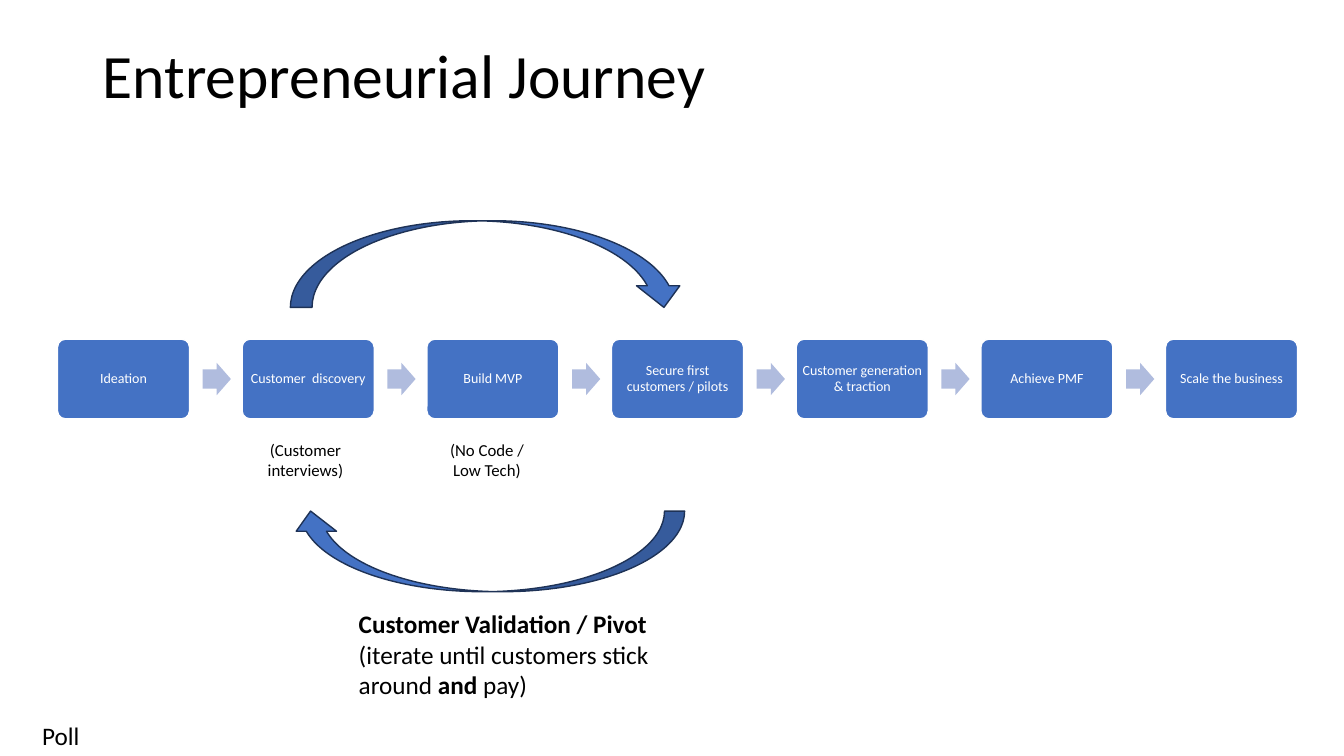
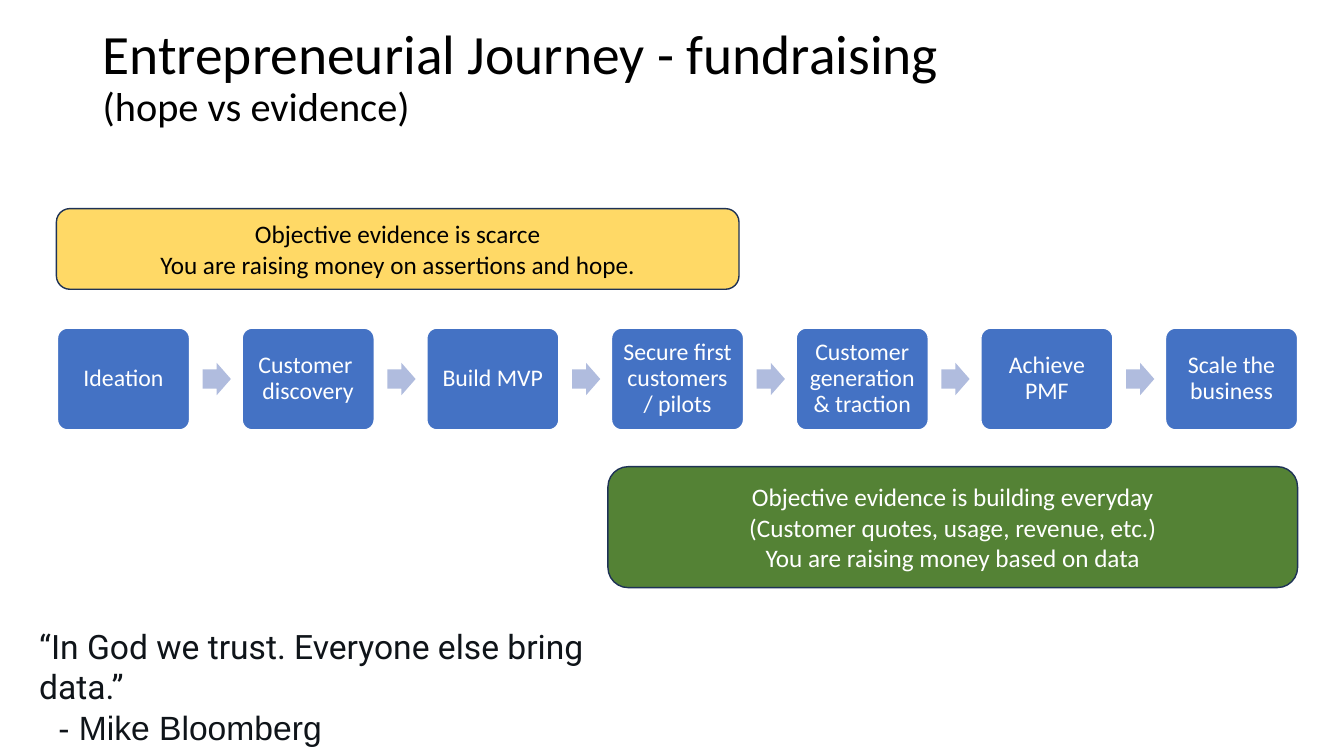
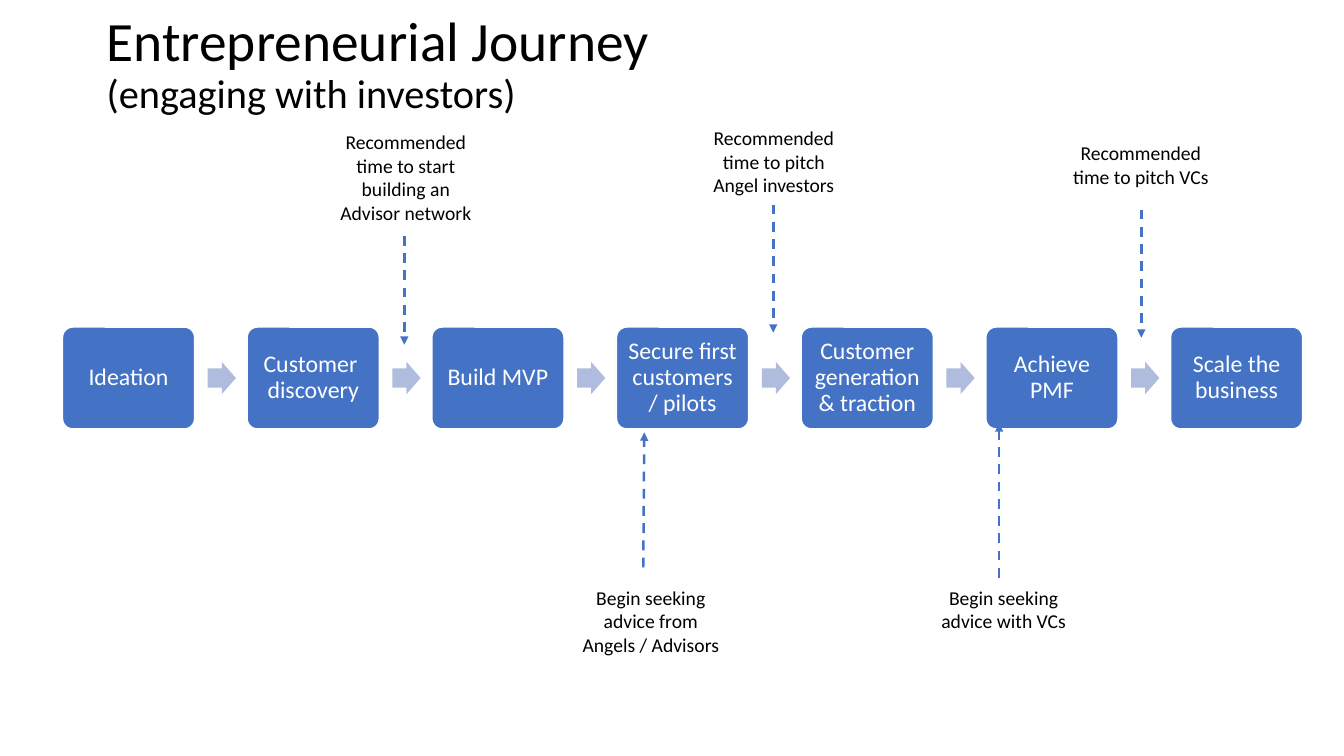
from dataclasses import dataclass
from typing import Optional

from lxml import etree
from pptx import Presentation
from pptx import util as u
from pptx.dml.color import RGBColor
from pptx.enum import dml, shapes, text
from pptx.oxml.ns import qn


@dataclass(frozen=True)
class Theme:
    """Colours, fonts and type sizes shared by all slides."""
    black: str = "000000"
    white: str = "FFFFFF"
    blue: str = "4472C4"
    pale_blue: str = "B0BCDE"
    navy: str = "1E3256"
    yellow: str = "FFD966"
    green: str = "548235"
    ink: str = "0F1419"
    font: str = "Calibri"
    quote_font: str = "Roboto"
    author_font: str = "Arial"
    title: float = 44
    long_title: float = 39.6
    subtitle: float = 28.8
    quote: float = 24
    body: float = 18
    stage: float = 17
    callout: float = 14
    note: float = 12
    small_stage: float = 10


THEME = Theme()


@dataclass(frozen=True)
class Area:
    left: float
    top: float
    width: float
    height: float

    def lengths(self) -> list:
        return [u.Inches(n) for n in (self.left, self.top, self.width, self.height)]


@dataclass(frozen=True)
class Span:
    """A piece of text; a newline in it is a line break."""
    text: str
    bold: Optional[bool] = None
    size: Optional[float] = None


@dataclass(frozen=True)
class Para:
    spans: tuple
    size: float = THEME.body
    color: str = THEME.black
    font: str = THEME.font
    centred: bool = False
    spacing: Optional[float] = None
    indent: float = 0


@dataclass(frozen=True)
class Flow:
    """Placement and type of the row of stages."""
    left: float
    middle: float
    box_height: float
    size: float
    inset: float
    discovery: str


@dataclass(frozen=True)
class Callout:
    """A centred note with a dashed arrow."""
    area: Area
    words: str
    start: tuple
    end: tuple


STAGE_COUNT = 7
STAGE_STEP = 10.99 / (STAGE_COUNT - 1)
STAGE_WIDTH = 1.31
ARROW_OFFSET, ARROW_WIDTH, ARROW_HEIGHT = 1.44, 0.28, 0.32


# Text

def plain(words: str, **style) -> Para:
    return Para((Span(words),), **style)


def write(frame, paras: list, anchor=text.MSO_ANCHOR.TOP) -> None:
    frame.word_wrap = True
    frame.vertical_anchor = anchor
    for index, para in enumerate(paras):
        paragraph = frame.add_paragraph() if index else frame.paragraphs[0]
        paragraph.alignment = text.PP_ALIGN.CENTER if para.centred else text.PP_ALIGN.LEFT
        if para.spacing:
            paragraph.line_spacing = para.spacing
        if para.indent:
            paragraph._p.get_or_add_pPr().set("marL", str(u.Inches(para.indent)))
        paragraph.font.name = para.font
        paragraph.font.size = u.Pt(para.size)
        paragraph.font.color.rgb = RGBColor.from_string(para.color)
        for span in para.spans:
            for number, line in enumerate(span.text.split("\n")):
                if number:
                    paragraph.add_line_break()
                if not line:
                    continue
                run = paragraph.add_run()
                run.text = line
                if span.bold is not None:
                    run.font.bold = span.bold
                if span.size:
                    run.font.size = u.Pt(span.size)


def add_text(page, area: Area, paras: list, anchor=text.MSO_ANCHOR.TOP) -> None:
    write(page.shapes.add_textbox(*area.lengths()).text_frame, paras, anchor)


def add_title(page, heading: str, subtitle: str = "", left: float = 0.92,
              top: float = 0.31) -> None:
    if subtitle:
        spans = (Span(heading + "\n", size=THEME.long_title),
                 Span(subtitle, size=THEME.subtitle))
    else:
        spans = (Span(heading),)
    add_text(page, Area(left, top, 11.5, 0.94),
             [Para(spans, size=THEME.title, spacing=0.9)], text.MSO_ANCHOR.MIDDLE)


# Shapes

def add_box(page, kind, area: Area, fill: str, outline: Optional[str] = None):
    box = page.shapes.add_shape(kind, *area.lengths())
    box.shadow.inherit = False
    box.fill.solid()
    box.fill.fore_color.rgb = RGBColor.from_string(fill)
    if outline:
        box.line.color.rgb = RGBColor.from_string(outline)
        box.line.width = u.Pt(1)
    else:
        box.line.fill.background()
    return box


def add_flow(page, flow: Flow) -> None:
    stages = ["Ideation", flow.discovery, "Build MVP", "Secure first customers / pilots",
              "Customer generation & traction", "Achieve PMF", "Scale the business"]
    for index, stage in enumerate(stages):
        left = flow.left + index * STAGE_STEP
        area = Area(left, flow.middle - flow.box_height / 2, STAGE_WIDTH, flow.box_height)
        box = add_box(page, shapes.MSO_SHAPE.ROUNDED_RECTANGLE, area, THEME.blue, THEME.white)
        box.adjustments[0] = 0.1
        frame = box.text_frame
        frame.margin_left = frame.margin_right = u.Inches(flow.inset)
        frame.margin_top = frame.margin_bottom = u.Inches(flow.inset)
        write(frame, [plain(stage, size=flow.size, color=THEME.white, centred=True,
                            spacing=0.9)], text.MSO_ANCHOR.MIDDLE)
        if index < STAGE_COUNT - 1:
            area = Area(left + ARROW_OFFSET, flow.middle - ARROW_HEIGHT / 2,
                        ARROW_WIDTH, ARROW_HEIGHT)
            arrow = add_box(page, shapes.MSO_SHAPE.RIGHT_ARROW, area, THEME.pale_blue)
            arrow.adjustments[0] = 0.6
            arrow.adjustments[1] = 0.5


def add_loop(page, area: Area, rotation: float = 0) -> None:
    loop = add_box(page, shapes.MSO_SHAPE.CURVED_DOWN_ARROW, area, THEME.blue, THEME.navy)
    loop.rotation = rotation


def add_banner(page, area: Area, fill: str, paras: list) -> None:
    banner = add_box(page, shapes.MSO_SHAPE.ROUNDED_RECTANGLE, area, fill, THEME.navy)
    write(banner.text_frame, paras, text.MSO_ANCHOR.MIDDLE)


def add_callout(page, callout: Callout) -> None:
    add_text(page, callout.area,
             [plain(callout.words, size=THEME.callout, centred=True)])
    ends = [u.Inches(n) for n in callout.start + callout.end]
    arrow = page.shapes.add_connector(shapes.MSO_CONNECTOR.STRAIGHT, *ends)
    arrow.line.color.rgb = RGBColor.from_string(THEME.blue)
    arrow.line.width = u.Pt(1.75)
    arrow.line.dash_style = dml.MSO_LINE.DASH
    etree.SubElement(arrow.line._get_or_add_ln(), qn("a:tailEnd"), type="triangle")
    etree.SubElement(arrow._element.spPr, qn("a:effectLst"))


# Slides

def build_journey(page) -> None:
    add_flow(page, Flow(0.57, 3.76, 0.79, THEME.small_stage, 0.04, "Customer  discovery"))
    for left, words in ((2.48, "(Customer interviews)"), (4.28, "(No Code / Low Tech)")):
        add_text(page, Area(left, 4.31, 1.1, 0.5),
                 [plain(words, size=THEME.note, centred=True)])
    add_loop(page, Area(2.88, 5.07, 3.91, 0.8), 180)
    add_loop(page, Area(2.88, 2.19, 3.92, 0.86))
    add_text(page, Area(3.46, 5.99, 3.3, 1.01), [
        Para((Span("Customer Validation / Pivot", bold=True),)),
        Para((Span("(iterate until customers stick around "), Span("and", bold=True),
              Span(" pay)"))),
    ])
    add_title(page, "Entrepreneurial Journey")
    add_text(page, Area(0.32, 7.1, 1.38, 0.4), [plain("Poll")])


def build_fundraising(page) -> None:
    add_flow(page, Flow(0.57, 3.76, 1.01, THEME.stage, 0.07, "Customer \ndiscovery"))
    add_banner(page, Area(0.56, 2.07, 6.77, 0.8), THEME.yellow, [
        plain("Objective evidence is scarce\nYou are raising money on assertions and hope.",
              centred=True)])
    add_banner(page, Area(6.03, 4.63, 6.84, 1.2), THEME.green, [
        plain(words, color=THEME.white, centred=True) for words in (
            "Objective evidence is building everyday",
            "(Customer quotes, usage, revenue, etc.)\nYou are raising money based on data")])
    add_title(page, "Entrepreneurial Journey - fundraising", "(hope vs evidence)")
    add_text(page, Area(0.29, 6.16, 6.12, 1.21), [
        plain("“In God we trust. Everyone else bring data.”", size=THEME.quote,
              color=THEME.ink, font=THEME.quote_font),
        plain("- Mike Bloomberg", size=THEME.quote, color=THEME.ink,
              font=THEME.author_font, indent=0.19),
    ])


def build_investors(page) -> None:
    add_flow(page, Flow(0.62, 3.75, 1.01, THEME.stage, 0.07, "Customer \ndiscovery"))
    add_title(page, "Entrepreneurial Journey", "(engaging with investors)", 0.96, 0.18)
    callouts = [
        Callout(Area(3.23, 1.24, 1.59, 1.04),
                "Recommended time to start building an Advisor network",
                (4.01, 2.34), (4.01, 3.42)),
        Callout(Area(6.88, 1.2, 1.59, 0.81),
                "Recommended time to pitch Angel investors", (7.67, 2.03), (7.67, 3.3)),
        Callout(Area(10.52, 1.35, 1.59, 0.57),
                "Recommended time to pitch VCs", (11.32, 2.08), (11.32, 3.35)),
        Callout(Area(5.66, 5.76, 1.59, 0.81),
                "Begin seeking advice from Angels / Advisors", (6.38, 5.63), (6.39, 4.29)),
        Callout(Area(9.16, 5.76, 1.59, 0.57),
                "Begin seeking advice with VCs", (9.91, 5.73), (9.91, 4.2)),
    ]
    for callout in callouts:
        add_callout(page, callout)


def main() -> None:
    deck = Presentation()
    deck.slide_width = u.Inches(13.33)
    deck.slide_height = u.Inches(7.5)
    blank = deck.slide_layouts[6]
    for build in (build_journey, build_fundraising, build_investors):
        build(deck.slides.add_slide(blank))
    deck.save("out.pptx")


if __name__ == "__main__":
    main()
